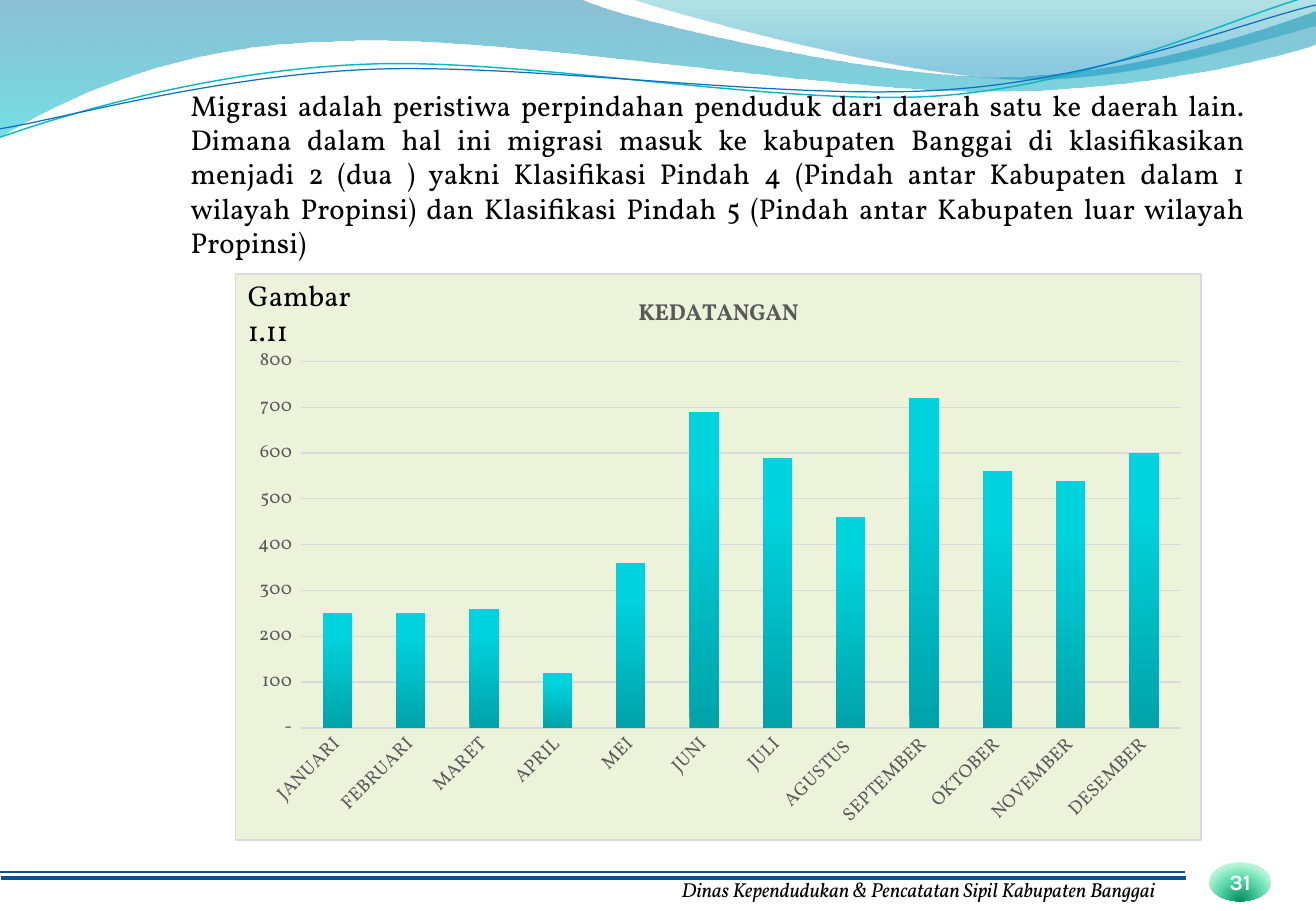
from dataclasses import dataclass

from lxml import etree
from pptx import Presentation
from pptx import util as u
from pptx.chart.data import CategoryChartData
from pptx.dml.color import RGBColor
from pptx.enum import chart as ch, shapes, text
from pptx.oxml import parse_xml
from pptx.oxml.ns import nsdecls, qn


@dataclass(frozen=True)
class Theme:
    serif: str = "Vollkorn"
    sans: str = "Karla"
    ink: str = "000000"
    white: str = "FFFFFF"
    label: str = "595959"
    rule: str = "095295"
    grid: str = "D9D9D9"
    panel: str = "EDF3DB"
    body_size: float = 17
    heading_size: float = 13.7
    badge_size: float = 13
    footer_size: float = 12
    axis_size: float = 11


THEME = Theme()

# Content
INTRO = (
    "Migrasi adalah peristiwa perpindahan penduduk dari daerah satu ke daerah lain. "
    "Dimana dalam hal ini migrasi masuk ke kabupaten Banggai di klasifikasikan "
    "menjadi 2 (dua ) yakni Klasifikasi Pindah 4 (Pindah antar Kabupaten dalam 1 "
    "wilayah Propinsi) dan Klasifikasi Pindah 5 (Pindah antar Kabupaten luar wilayah "
    "Propinsi)"
)
FIGURE = "Gambar 1.11"
FOOTER = "Dinas Kependudukan & Pencatatan Sipil Kabupaten Banggai"
PAGE_NUMBER = "31"
CHART_TITLE = "KEDATANGAN"
ARRIVALS = {
    "JANUARI": 250, "FEBRUARI": 250, "MARET": 260, "APRIL": 120,
    "MEI": 360, "JUNI": 690, "JULI": 590, "AGUSTUS ": 460,
    "SEPTEMBER": 720, "OKTOBER": 560, "NOVEMBER": 540, "DESEMBER": 600,
}
NUMBER_FORMAT = r'_(* #,##0_);_(* \(#,##0\);_(* "-"_);_(@_)'

# Gradient stops: position, colour, opacity (percent)
BAR_STOPS = [(0, "00A3AA", 100), (80, "00D3DD", 100), (100, "00D4DE", 100)]
BADGE_STOPS = [(0, "008C60", 100), (68, "65DEB0", 100), (100, "B2F4D6", 100)]

# Waves: a pair is a corner, a sextet is a cubic curve (inches)
WAVE_FILLS = [
    ([(0, 0), (4.77, -0.01), (5.15, 0.17, 7.19, 0.63, 8.22, 0.63),
      (9.24, 0.63, 10.38, 0.26, 10.83, 0.09), (10.84, 0.36),
      (10.65, 0.44, 9.42, 0.76, 8.08, 0.75), (6.74, 0.75, 4.14, 0.28, 2.79, 0.34),
      (1.4, 0.36, 0.5, 0.83, -0.01, 1.13)],
     [(0, "0074A1", 45), (100, "00C6CF", 55)]),
    ([(5.19, -0.01), (5.52, 0.11, 7.39, 0.62, 8.33, 0.65),
      (9.27, 0.69, 10.42, 0.32, 10.83, 0.21), (10.83, 0)],
     [(0, "00A1A9", 30), (80, "008BBF", 45)]),
]
WAVE_LINES = [
    ([(0, 1.13), (0.52, 0.95, 1.71, 0.58, 3, 0.53),
      (4.28, 0.47, 6.42, 0.88, 7.72, 0.79), (9.02, 0.7, 10.17, 0.13, 10.81, -0.04)],
     "0AB8BF", 0.85),
    ([(0, 1.06), (0.51, 0.98, 1.77, 0.62, 3.07, 0.57),
      (4.36, 0.52, 6.47, 0.83, 7.76, 0.74), (9.06, 0.66, 10.2, 0.19, 10.83, 0.04)],
     "0F6FC6", 0.75),
]


def rgb(value):
    return RGBColor.from_string(value)


def style_font(font, size, color, name=THEME.serif, bold=False, italic=False):
    font.size, font.name, font.bold, font.italic = u.Pt(size), name, bold, italic
    font.color.rgb = rgb(color)


def style_line(line, color, width):
    line.color.rgb = rgb(color)
    line.width = u.Pt(width)


def set_gradient(fill, element, stops, direction):
    fill.gradient()
    gradient = element.find(".//" + qn("a:gradFill"))
    for child in list(gradient):
        gradient.remove(child)
    stop_list = etree.SubElement(gradient, qn("a:gsLst"))
    for position, color, opacity in stops:
        stop = etree.SubElement(stop_list, qn("a:gs"), pos=str(position * 1000))
        tint = etree.SubElement(stop, qn("a:srgbClr"), val=color)
        if opacity < 100:
            etree.SubElement(tint, qn("a:alpha"), val=str(opacity * 1000))
    gradient.append(parse_xml(direction))


def linear(angle):
    return f'<a:lin {nsdecls("a")} ang="{angle * 60000}" scaled="0"/>'


def add_wave(page, outline, close):
    points = [(u.Inches(step[i]), u.Inches(step[i + 1]))
              for step in outline for i in range(0, len(step), 2)]
    builder = page.shapes.build_freeform(*points[0])
    builder.add_line_segments(points[1:], close=close)
    wave = builder.convert_to_shape()
    wave.shadow.inherit = False

    # Join the three points of each sextet into one curve
    segments = iter(wave.element.findall(".//" + qn("a:lnTo")))
    for step in outline[1:]:
        first = next(segments)
        if len(step) == 6:
            curve = etree.Element(qn("a:cubicBezTo"))
            first.addprevious(curve)
            for segment in (first, next(segments), next(segments)):
                curve.append(segment[0])
                segment.getparent().remove(segment)
    return wave


def add_text(page, words, place, size, align=text.PP_ALIGN.LEFT, italic=False):
    box = page.shapes.add_textbox(*map(u.Inches, place))
    frame = box.text_frame
    frame.word_wrap = True
    frame.margin_left = frame.margin_right = u.Inches(0.09)
    frame.margin_top = frame.margin_bottom = u.Inches(0.04)
    para = frame.paragraphs[0]
    para.text, para.alignment = words, align
    style_font(para.runs[0].font, size, THEME.ink, italic=italic)


def set_layout(element, following, **settings):
    for old in element.findall(qn("c:layout")):
        element.remove(old)
    parts = "".join(f'<c:{key} val="{value}"/>' for key, value in settings.items())
    following.addprevious(parse_xml(
        f'<c:layout {nsdecls("c")}><c:manualLayout>{parts}</c:manualLayout></c:layout>'))


def add_arrivals_chart(page):
    data = CategoryChartData(number_format=NUMBER_FORMAT)
    data.categories = list(ARRIVALS)
    data.add_series("Series 1", list(ARRIVALS.values()))
    chart = page.shapes.add_chart(ch.XL_CHART_TYPE.COLUMN_STACKED,
                                  *map(u.Inches, (1.93, 2.25, 7.96, 4.67)), data).chart
    style_font(chart.font, THEME.axis_size, THEME.ink)
    chart.has_legend = False

    # Title
    chart.has_title = True
    para = chart.chart_title.text_frame.paragraphs[0]
    para.text = CHART_TITLE
    style_font(para.runs[0].font, THEME.heading_size, THEME.label, bold=True)
    chart.chart_title.include_in_layout = False
    title = chart.chart_title._element
    set_layout(title, title.find(qn("c:overlay")), xMode="edge", yMode="edge",
               x=0.413, y=0.033)

    # Bars
    plot = chart.plots[0]
    plot.gap_width, plot.overlap, plot.vary_by_categories = 150, 100, False
    bars = plot.series[0]
    set_gradient(bars.format.fill, bars._element, BAR_STOPS, linear(270))
    set_layout(plot._element.getparent(), plot._element, layoutTarget="inner",
               xMode="edge", yMode="edge", x=0.068, y=0.155, w=0.911, h=0.647)

    # Axes
    months, counts = chart.category_axis, chart.value_axis
    for axis in (months, counts):
        axis.major_tick_mark = axis.minor_tick_mark = ch.XL_TICK_MARK.NONE
        style_font(axis.tick_labels.font, THEME.axis_size, THEME.label)
    months._element.find(qn("c:txPr")).find(qn("a:bodyPr")).set("rot", "-2700000")
    style_line(months.format.line, THEME.grid, 1)
    counts.minimum_scale, counts.maximum_scale, counts.major_unit = 0, 800, 100
    counts.tick_labels.number_format = NUMBER_FORMAT
    counts.tick_labels.number_format_is_linked = False
    counts.format.line.fill.background()
    style_line(counts.major_gridlines.format.line, THEME.grid, 0.75)

    # Panel behind the chart
    chart._chartSpace.find(qn("c:chart")).addnext(parse_xml(
        f'<c:spPr {nsdecls("c", "a")}>'
        f'<a:solidFill><a:srgbClr val="{THEME.panel}"/></a:solidFill>'
        f'<a:ln w="{u.Pt(0.75)}"><a:solidFill><a:srgbClr val="{THEME.grid}"/>'
        '</a:solidFill></a:ln></c:spPr>'))


def add_badge(page):
    badge = page.shapes.add_shape(shapes.MSO_SHAPE.OVAL,
                                  *map(u.Inches, (9.95, 7.1, 0.51, 0.32)))
    set_gradient(badge.fill, badge.element, BADGE_STOPS,
                 f'<a:path {nsdecls("a")} path="circle"><a:fillToRect l="50000" '
                 't="130000" r="50000" b="-30000"/></a:path>')
    badge.line.fill.background()
    badge.shadow.inherit = False
    frame = badge.text_frame
    frame.word_wrap, frame.vertical_anchor = False, text.MSO_ANCHOR.MIDDLE
    para = frame.paragraphs[0]
    para.text, para.alignment = PAGE_NUMBER, text.PP_ALIGN.CENTER
    style_font(para.runs[0].font, THEME.badge_size, THEME.white, THEME.sans, bold=True)


def main():
    deck = Presentation()
    deck.slide_width, deck.slide_height = u.Inches(10.83), u.Inches(7.5)
    page = deck.slides.add_slide(deck.slide_layouts[6])

    # Waves along the top
    for outline, stops in WAVE_FILLS:
        wave = add_wave(page, outline, close=True)
        set_gradient(wave.fill, wave.element, stops, linear(90))
        wave.line.fill.background()
    for outline, color, width in WAVE_LINES:
        wave = add_wave(page, outline, close=False)
        wave.fill.background()
        style_line(wave.line, color, width)

    # Introduction and footer
    add_text(page, INTRO, (1.48, 0.68, 8.86, 1.23), THEME.body_size,
             text.PP_ALIGN.JUSTIFY)
    add_text(page, FOOTER, (5.52, 7.18, 4.5, 0.29), THEME.footer_size, italic=True)
    for left, top, width in ((0, 7.18, 0.75), (0.01, 7.23, 2.25)):
        rule = page.shapes.add_connector(
            shapes.MSO_CONNECTOR.STRAIGHT,
            *map(u.Inches, (left, top, left + 9.75, top)))
        style_line(rule.line, THEME.rule, width)
        etree.SubElement(rule.element.spPr, qn("a:effectLst"))
    add_badge(page)

    # Chart and its figure label
    add_arrivals_chart(page)
    add_text(page, FIGURE, (1.95, 2.25, 1.34, 0.37), THEME.body_size)
    deck.save("out.pptx")


if __name__ == "__main__":
    main()
